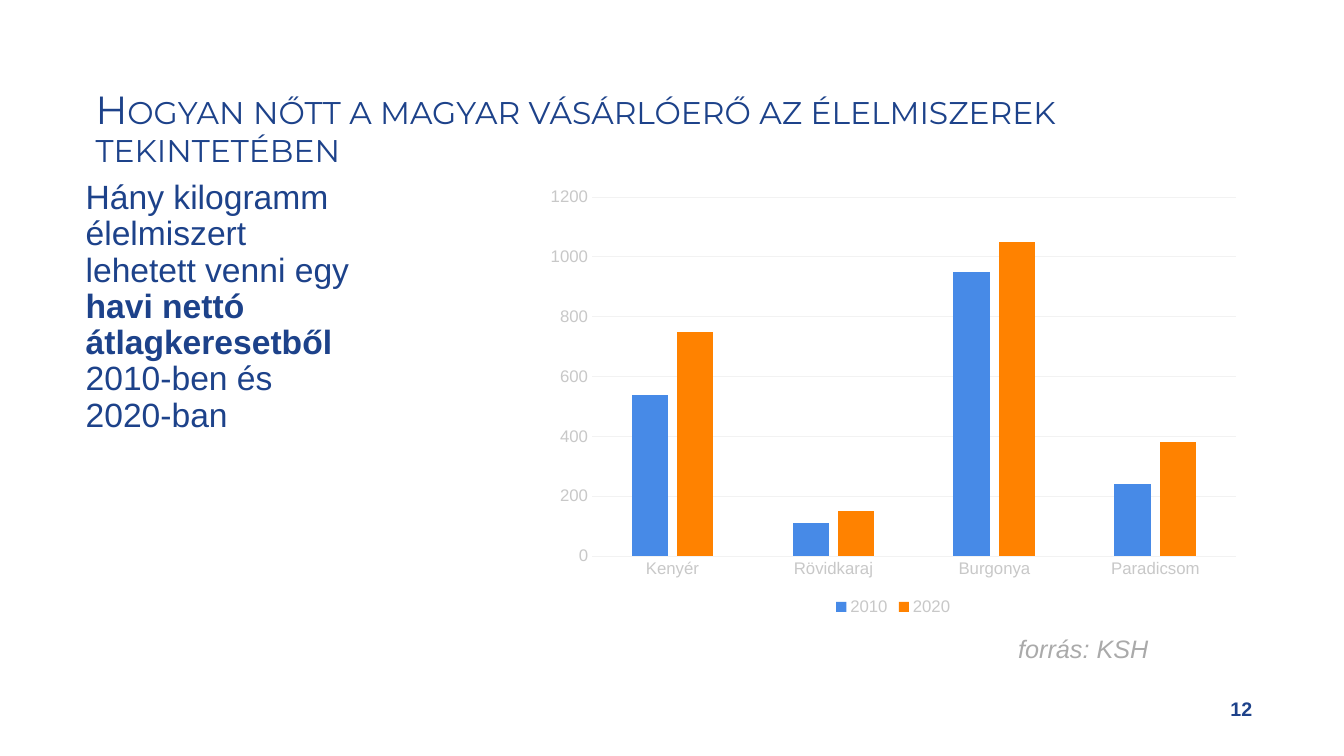
from lxml import etree
from pptx import Presentation
from pptx.chart.data import CategoryChartData
from pptx.dml.color import RGBColor
from pptx.enum.chart import XL_CHART_TYPE, XL_LEGEND_POSITION, XL_TICK_MARK
from pptx.enum.text import MSO_ANCHOR, PP_ALIGN
from pptx.util import Inches, Pt

NAVY = RGBColor(0x1D, 0x42, 0x8A)
BLUE = RGBColor(0x47, 0x8A, 0xE7)
ORANGE = RGBColor(0xFF, 0x82, 0x00)
GRAY = RGBColor(0xAA, 0xAA, 0xAA)
LABEL_GRAY = RGBColor(0xC8, 0xC8, 0xC8)
GRID_GRAY = RGBColor(0xF2, 0xF2, 0xF2)

COLUMNS = XL_CHART_TYPE.COLUMN_CLUSTERED
BOTTOM = XL_LEGEND_POSITION.BOTTOM
NO_TICKS = XL_TICK_MARK.NONE
TOP, MIDDLE = MSO_ANCHOR.TOP, MSO_ANCHOR.MIDDLE
LEFT, RIGHT = PP_ALIGN.LEFT, PP_ALIGN.RIGHT


class SlideBuilder:
    body_font = "Arial"
    title_font = "Montserrat"

    def __init__(self, slide):
        self.slide = slide

    def style(self, font, size, color):
        font.name = self.body_font
        font.size = Pt(size)
        font.color.rgb = color

    def text(self, box, runs, size, color=NAVY, insets=(0.1, 0.05, 0.1, 0.05),
             align=LEFT, anchor=TOP, spacing=1.0):
        frame = self.slide.shapes.add_textbox(*map(Inches, box)).text_frame
        frame.word_wrap = True
        frame.vertical_anchor = anchor
        (frame.margin_left, frame.margin_top,
         frame.margin_right, frame.margin_bottom) = map(Inches, insets)
        paragraph = frame.paragraphs[0]
        paragraph.alignment = align
        paragraph.line_spacing = spacing
        for words, bold in runs:
            run = paragraph.add_run()
            run.text = words
            self.style(run.font, size, color)
            run.font.bold = bold
        return paragraph

    def title(self, box, words):
        heading = self.text(box, [(words, False)], 28, spacing=0.8).runs[0]
        heading.font.name = self.title_font
        heading.font._element.set("cap", "small")

    def source_note(self, box, words):
        note = self.text(box, [(words, False)], 18, GRAY)
        note.runs[0].font.italic = True

    def axis(self, axis):
        axis.major_tick_mark = NO_TICKS
        axis.minor_tick_mark = NO_TICKS
        self.style(axis.tick_labels.font, 12, LABEL_GRAY)

    def gray_line(self, line):
        line.color.rgb = GRID_GRAY
        line.width = Pt(0.75)

    def column_chart(self, box, categories, series):
        data = CategoryChartData()
        data.categories = categories
        for name, values, _ in series:
            data.add_series(name, values)
        chart = self.slide.shapes.add_chart(COLUMNS, *map(Inches, box), data).chart
        chart.has_title = False
        self.style(chart.font, 10, GRAY)

        plot = chart.plots[0]
        plot.vary_by_categories = False
        plot.gap_width = 219
        plot.overlap = -27
        for bars, (_, _, color) in zip(plot.series, series):
            bars.format.fill.solid()
            bars.format.fill.fore_color.rgb = color
            bars.invert_if_negative = False

        foods, kilograms = chart.category_axis, chart.value_axis
        self.axis(foods)
        self.axis(kilograms)
        self.gray_line(foods.format.line)
        self.gray_line(kilograms.major_gridlines.format.line)
        kilograms.format.line.fill.background()
        kilograms.minimum_scale = 0
        kilograms.maximum_scale = 1200
        kilograms.major_unit = 200

        chart.has_legend = True
        chart.legend.position = BOTTOM
        chart.legend.include_in_layout = False
        self.style(chart.legend.font, 12, LABEL_GRAY)


def main():
    deck = Presentation()
    deck.slide_width = Inches(13.33)
    deck.slide_height = Inches(7.5)
    page = SlideBuilder(deck.slides.add_slide(deck.slide_layouts[6]))

    page.text((0.85, 1.79, 2.73, 4.36), [
        ("Hány kilogramm élelmiszert lehetett venni egy ", False),
        ("havi nettó átlagkeresetből ", True),
        ("2010-ben és 2020-ban", False),
    ], 24, insets=(0, 0, 0, 0), spacing=0.9)
    page.title((0.85, 0.89, 10.85, 0.89),
               "Hogyan nőtt a magyar vásárlóerő az élelmiszerek tekintetében")
    page.text((9.42, 6.83, 3, 0.4), [("12", True)], 14,
              insets=(0.1, 0.05, 0, 0.05), align=RIGHT, anchor=MIDDLE)
    page.column_chart((5.32, 1.78, 7.08, 4.37),
                      ["Kenyér", "Rövidkaraj", "Burgonya", "Paradicsom"],
                      [("2010", (540, 110, 950, 240), BLUE),
                       ("2020", (750, 150, 1050, 380), ORANGE)])
    page.source_note((10, 6.23, 3.2, 0.4), "forrás: KSH")

    deck.save("out.pptx")


if __name__ == "__main__":
    main()
